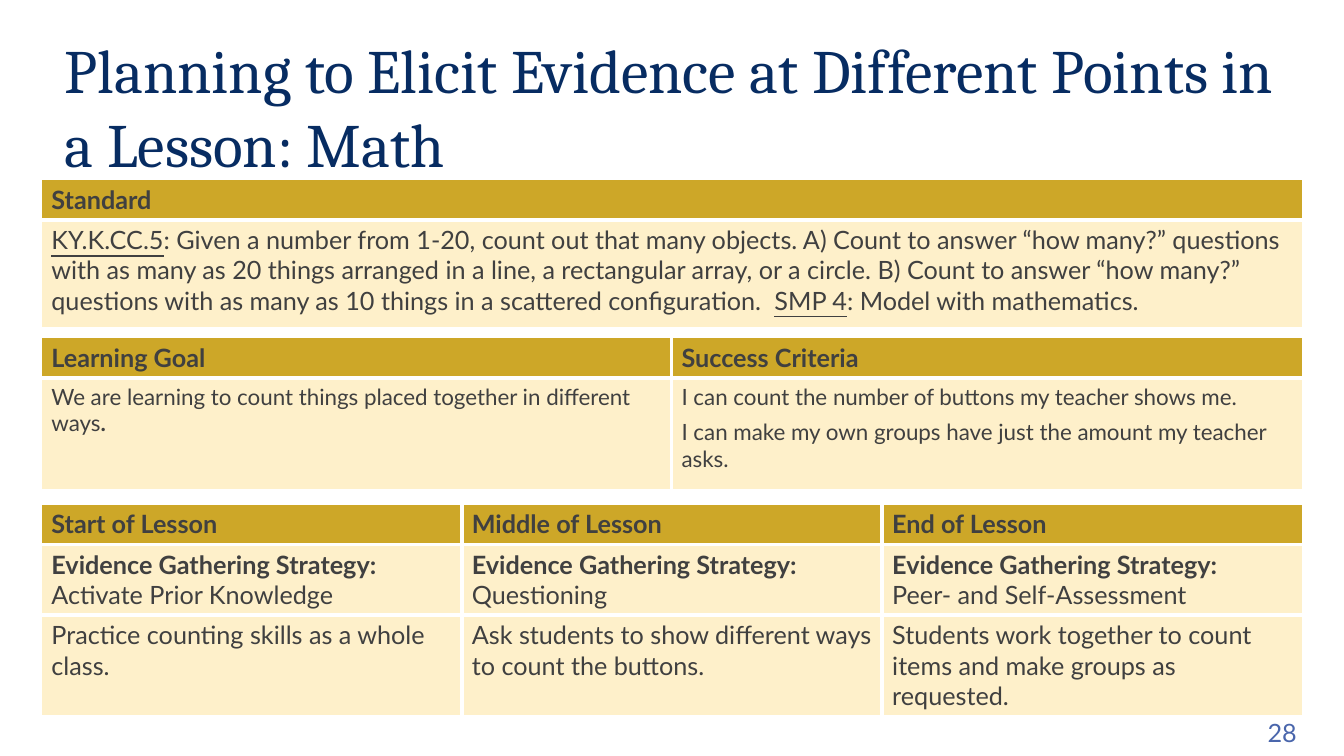
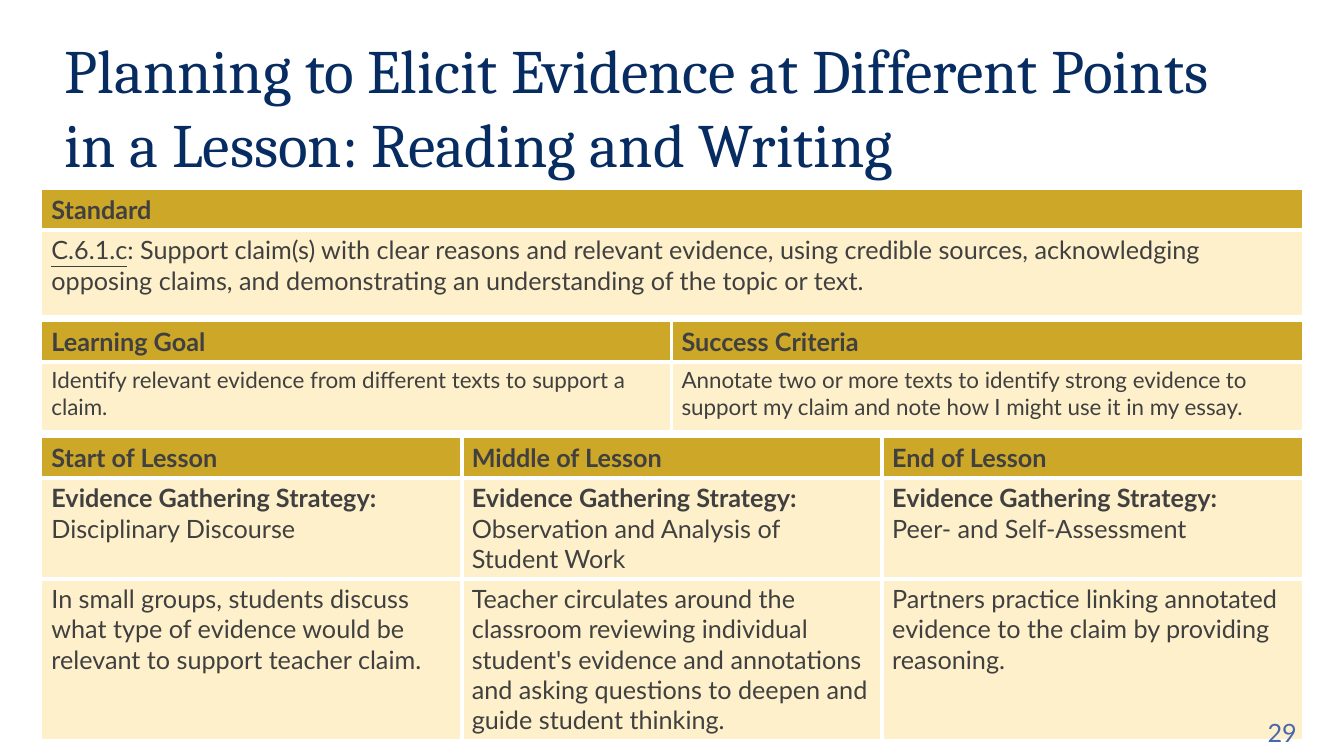
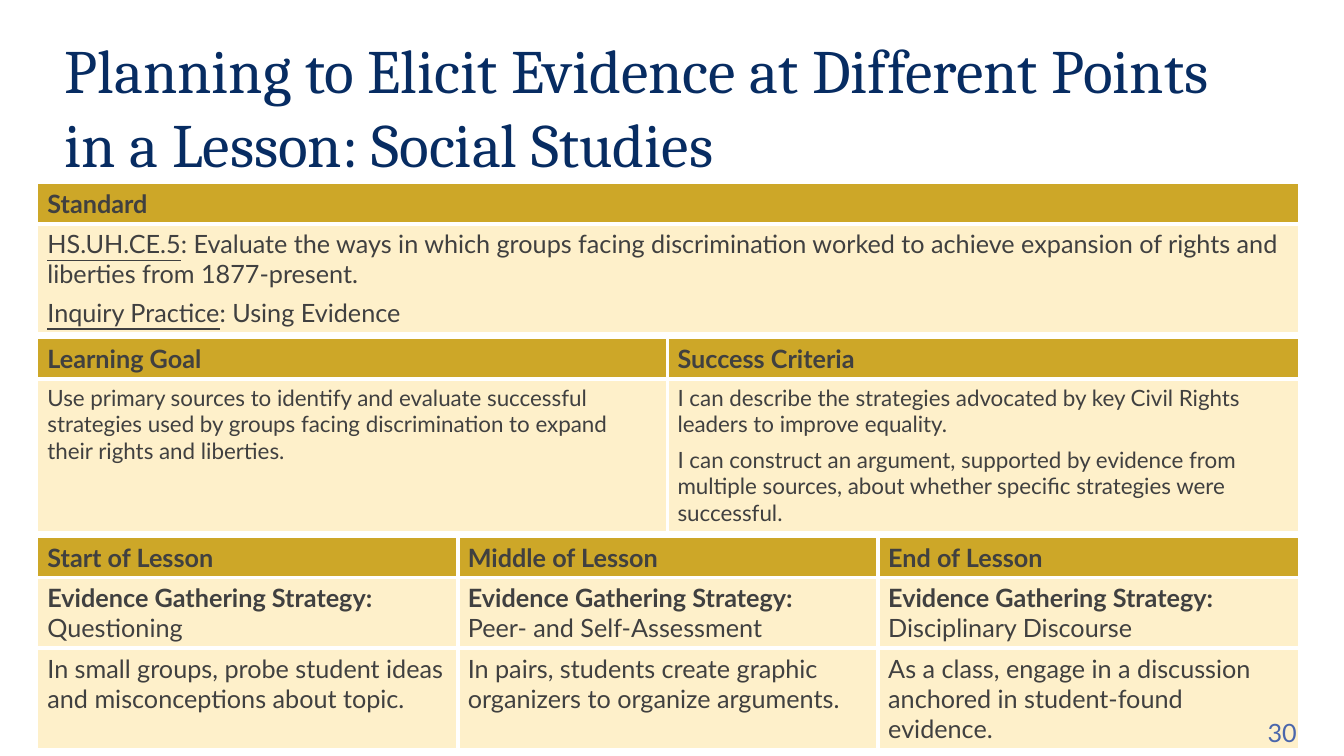
from lxml import etree
from pptx import Presentation
from pptx.dml.color import RGBColor
from pptx.enum.text import MSO_ANCHOR, MSO_AUTO_SIZE, PP_ALIGN
from pptx.oxml.ns import qn
from pptx.util import Inches, Pt

NAVY = RGBColor(0x07, 0x2C, 0x62)
BLUE = RGBColor(0x4A, 0x66, 0xAC)
GRAY = RGBColor(0x40, 0x40, 0x40)
GOLD = RGBColor(0xCD, 0xA7, 0x28)
CREAM = RGBColor(0xFE, 0xF0, 0xCA)
WHITE = RGBColor(0xFF, 0xFF, 0xFF)

TITLE_FONT, BODY_FONT = "Cambria", "Lato"
TITLE = "Planning to Elicit Evidence at Different Points in a Lesson: "
STRATEGY = "Evidence Gathering Strategy:"
HEADER_HEIGHT = 0.4
STANDARD_COLS = [12.51]
GOAL_COLS = [6.25, 6.26]
LESSON_COLS = [4.17] * 3
BOLD, UNDERLINE = "bold", "underline"

# A cell is a list of paragraphs; a paragraph is a list of (text, style) runs.
# "tops" and "heights" go with the standard, goal and lesson tables.
LESSONS = [
    {
        "subject": "Math", "number": 28, "title_width": 12.26, "left": 0.41,
        "tops": (1.78, 3.35, 5.0),
        "heights": ([1.07], [1.11], [0.7, 1.0]),
        "standard": [[
            ("KY.K.CC.5", UNDERLINE),
            (": Given a number from 1-20, count out that many objects. "
             "A) Count to answer “how many?” questions with as many as 20 things "
             "arranged in a line, a rectangular array, or a circle. "
             "B) Count to answer “how many?” questions with as many as 10 things "
             "in a scattered configuration.  ", None),
            ("SMP 4", UNDERLINE),
            (": Model with mathematics.", None),
        ]],
        "goal": [[("We are learning to count things placed together in different ways", None),
                  (".", BOLD)]],
        "criteria": ["I can count the number of buttons my teacher shows me.",
                     "I can make my own groups have just the amount my teacher asks."],
        "steps": [
            ("Activate Prior Knowledge", "Practice counting skills as a whole class."),
            ("Questioning", "Ask students to show different ways to count the buttons."),
            ("Peer- and Self-Assessment",
             "Students work together to count items and make groups as requested."),
        ],
    },
    {
        "subject": "Reading and Writing", "number": 29, "title_width": 11.89, "left": 0.41,
        "tops": (1.88, 3.19, 4.34),
        "heights": ([0.85], [0.68], [1.0, 1.6]),
        "standard": [[
            ("C.6.1.c", UNDERLINE),
            (": Support claim(s) with clear reasons and relevant evidence, using credible "
             "sources, acknowledging opposing claims, and demonstrating an understanding "
             "of the topic or text.", None),
        ]],
        "goal": ["Identify relevant evidence from different texts to support a claim."],
        "criteria": ["Annotate two or more texts to identify strong evidence to support "
                     "my claim and note how I might use it in my essay."],
        "steps": [
            ("Disciplinary Discourse",
             "In small groups, students discuss what type of evidence would be relevant "
             "to support teacher claim."),
            ("Observation and Analysis of Student Work",
             "Teacher circulates around the classroom reviewing individual student's "
             "evidence and annotations and asking questions to deepen and guide "
             "student thinking."),
            ("Peer- and Self-Assessment",
             "Partners practice linking annotated evidence to the claim by providing "
             "reasoning."),
        ],
    },
    {
        "subject": "Social Studies", "number": 30, "title_width": 11.68, "left": 0.37,
        "tops": (1.82, 3.36, 5.33),
        "heights": ([1.08], [1.5], [0.7, 1.0]),
        "standard": [
            [("HS.UH.CE.5", UNDERLINE),
             (": Evaluate the ways in which groups facing discrimination worked to achieve "
              "expansion of rights and liberties from 1877-present.", None)],
            [("Inquiry Practice", UNDERLINE), (": Using Evidence", None)],
        ],
        "goal": ["Use primary sources to identify and evaluate successful strategies used "
                 "by groups facing discrimination to expand their rights and liberties."],
        "criteria": ["I can describe the strategies advocated by key Civil Rights leaders "
                     "to improve equality.",
                     "I can construct an argument, supported by evidence from multiple "
                     "sources, about whether specific strategies were successful."],
        "steps": [
            ("Questioning",
             "In small groups, probe student ideas and misconceptions about topic."),
            ("Peer- and Self-Assessment",
             "In pairs, students create graphic organizers to organize arguments."),
            ("Disciplinary Discourse",
             "As a class, engage in a discussion anchored in student-found evidence."),
        ],
    },
]


def add_run(p, text, size, color, font=BODY_FONT, style=None):
    r = p.add_run()
    r.text = text
    r.font.name, r.font.size = font, Pt(size)
    r.font.color.rgb = color
    r.font.bold = style == BOLD
    r.font.underline = style == UNDERLINE


def fill_cell(cell, paragraphs, fill, size, space_after):
    cell.fill.solid()
    cell.fill.fore_color.rgb = fill
    tf = cell.text_frame
    for i, runs in enumerate(paragraphs):
        p = tf.add_paragraph() if i else tf.paragraphs[0]
        p.space_after = Pt(space_after)
        for text, style in [(runs, None)] if isinstance(runs, str) else runs:
            add_run(p, text, size, GRAY, style=style)


def set_borders(cell, inner):
    """Draw white borders, thick on the sides that meet another cell."""
    tc_pr = cell._tc.get_or_add_tcPr()
    for i, (side, is_inner) in enumerate(zip(("lnL", "lnR", "lnT", "lnB"), inner)):
        ln = etree.Element(qn(f"a:{side}"), w=str(Pt(3 if is_inner else 1)))
        solid = etree.SubElement(ln, qn("a:solidFill"))
        etree.SubElement(solid, qn("a:srgbClr"), val=str(WHITE))
        tc_pr.insert(i, ln)


def add_grid(s, left, top, cols, heights, headers, rows, size=18, space_after=0):
    """Add a table with a gold header row above cream rows."""
    heights = [HEADER_HEIGHT] + heights
    grid = [[[[(h, BOLD)]] for h in headers]] + rows
    table = s.shapes.add_table(len(grid), len(cols), Inches(left), Inches(top),
                               Inches(sum(cols)), Inches(sum(heights))).table
    for column, width in zip(table.columns, cols):
        column.width = Inches(width)
    for row, height in zip(table.rows, heights):
        row.height = Inches(height)
    for i, row in enumerate(grid):
        for j, paragraphs in enumerate(row):
            cell = table.cell(i, j)
            if i:
                fill_cell(cell, paragraphs, CREAM, size, space_after)
            else:
                fill_cell(cell, paragraphs, GOLD, 18, 0)
            set_borders(cell, (j > 0, j < len(cols) - 1, i > 0, i < len(grid) - 1))


def add_title(s, subject, width):
    title = s.shapes.title
    title.left, title.top = Inches(0.54), Inches(0.27)
    title.width, title.height = Inches(width), Inches(1.44)
    tf = title.text_frame
    tf.word_wrap, tf.auto_size = True, MSO_AUTO_SIZE.NONE
    tf.vertical_anchor = MSO_ANCHOR.TOP
    p = tf.paragraphs[0]
    p.alignment = PP_ALIGN.LEFT
    add_run(p, TITLE + subject, 44, NAVY, TITLE_FONT)


def add_page_number(s, number):
    tf = s.shapes.add_textbox(Inches(12.21), Inches(7.07), Inches(0.75), Inches(0.4)).text_frame
    tf.word_wrap = True
    p = tf.paragraphs[0]
    p.alignment = PP_ALIGN.RIGHT
    add_run(p, str(number), 18, BLUE)


def add_lesson(prs, lesson):
    s = prs.slides.add_slide(prs.slide_layouts[5])
    add_title(s, lesson["subject"], lesson["title_width"])
    strategies = [[[(STRATEGY, BOLD)], name] for name, _ in lesson["steps"]]
    activities = [[activity] for _, activity in lesson["steps"]]
    tables = [
        (STANDARD_COLS, ["Standard"], [[lesson["standard"]]], 18, 6),
        (GOAL_COLS, ["Learning Goal", "Success Criteria"],
         [[lesson["goal"], lesson["criteria"]]], 16, 6),
        (LESSON_COLS, ["Start of Lesson", "Middle of Lesson", "End of Lesson"],
         [strategies, activities], 18, 0),
    ]
    for top, heights, (cols, *content) in zip(lesson["tops"], lesson["heights"], tables):
        add_grid(s, lesson["left"], top, cols, heights, *content)
    add_page_number(s, lesson["number"])


def main():
    prs = Presentation()
    prs.slide_width, prs.slide_height = Inches(13.33), Inches(7.5)
    for lesson in LESSONS:
        add_lesson(prs, lesson)
    prs.save("out.pptx")


if __name__ == "__main__":
    main()
